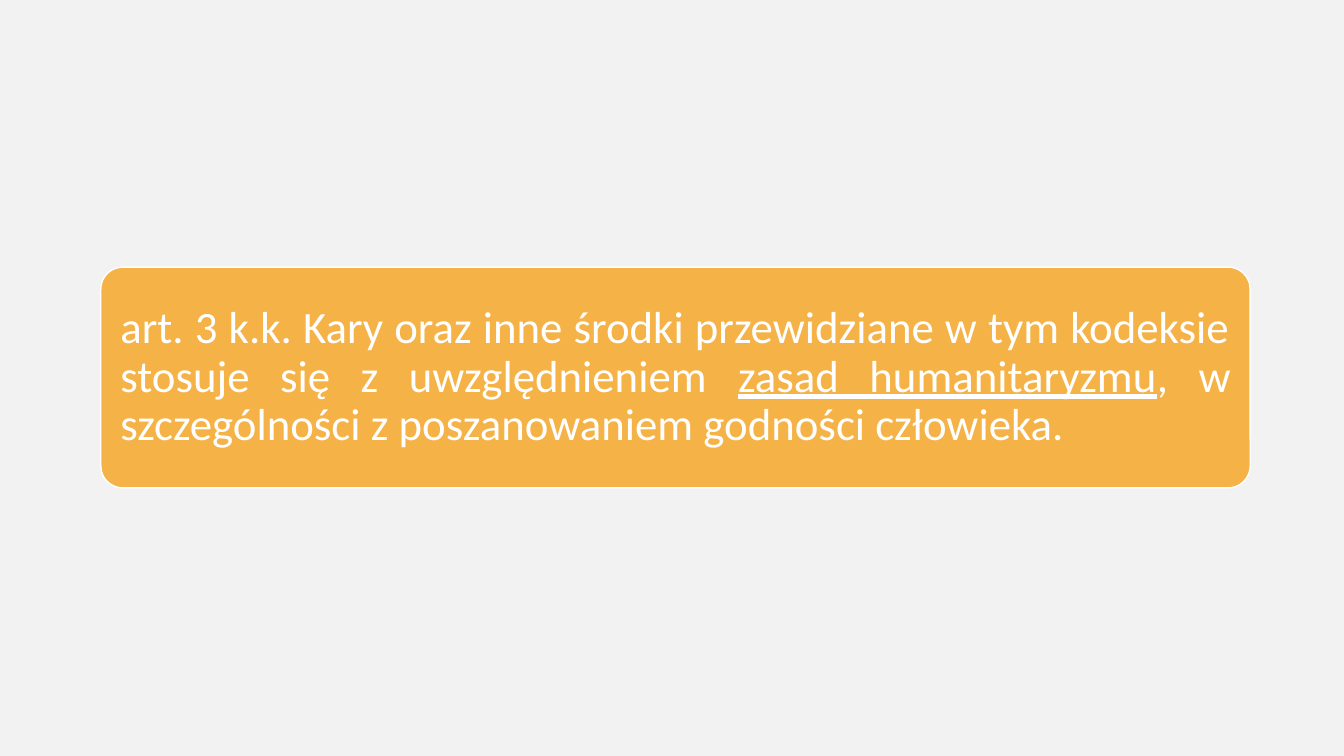
import pptx
import pptx.dml.color
import pptx.enum.shapes
import pptx.enum.text
import pptx.oxml
import pptx.oxml.ns
import pptx.util
from pptx.util import Inches

ARTICLE = [
    ("art. 3 k.k. Kary oraz inne środki przewidziane w tym kodeksie stosuje się z uwzględnieniem ", False),
    ("zasad humanitaryzmu", True),
    (", w szczególności z poszanowaniem godności człowieka.", False),
]


def color(value):
    return pptx.dml.color.RGBColor.from_string(value)


def set_opacity(fill_color_parent, percent):
    rgb = fill_color_parent.find(".//" + pptx.oxml.ns.qn("a:srgbClr"))
    namespace = pptx.oxml.ns.nsdecls("a")
    rgb.append(pptx.oxml.parse_xml(f'<a:alpha {namespace} val="{percent * 1000}"/>'))


def add_panel(page, left, top, width, height, fill, line, opacity):
    panel = page.shapes.add_shape(
        pptx.enum.shapes.MSO_SHAPE.ROUNDED_RECTANGLE,
        Inches(left), Inches(top), Inches(width), Inches(height))
    panel.adjustments[0] = 0.1
    panel.shadow.inherit = False
    panel.fill.solid()
    panel.fill.fore_color.rgb = color(fill)
    set_opacity(panel._element.spPr, opacity)
    panel.line.color.rgb = color(line)
    panel.line.width = pptx.util.Pt(1)
    return panel


def write_text(box, spans, font, size, ink, align, spacing, inset):
    frame = box.text_frame
    frame.word_wrap = True
    frame.vertical_anchor = pptx.enum.text.MSO_ANCHOR.MIDDLE
    frame.margin_left = frame.margin_right = Inches(inset)
    frame.margin_top = frame.margin_bottom = Inches(inset)
    para = frame.paragraphs[0]
    para.alignment = align
    para.line_spacing = spacing
    for text, underlined in spans:
        span = para.add_run()
        span.text = text
        span.font.name = font
        span.font.size = pptx.util.Pt(size)
        span.font.color.rgb = color(ink)
        span.font.underline = underlined


def main():
    deck = pptx.Presentation()
    deck.slide_width = Inches(13.33)
    deck.slide_height = Inches(7.5)
    page = deck.slides.add_slide(deck.slide_layouts[6])
    page.background.fill.solid()
    page.background.fill.fore_color.rgb = color("F2F2F2")
    panel = add_panel(page, 1, 2.65, 11.4, 2.19, fill="F6A21D", line="FFFFFF", opacity=80)
    write_text(panel, ARTICLE, font="Calibri", size=32, ink="FFFFFF",
               align=pptx.enum.text.PP_ALIGN.JUSTIFY, spacing=0.9, inset=0.13)
    deck.save("out.pptx")


if __name__ == "__main__":
    main()
